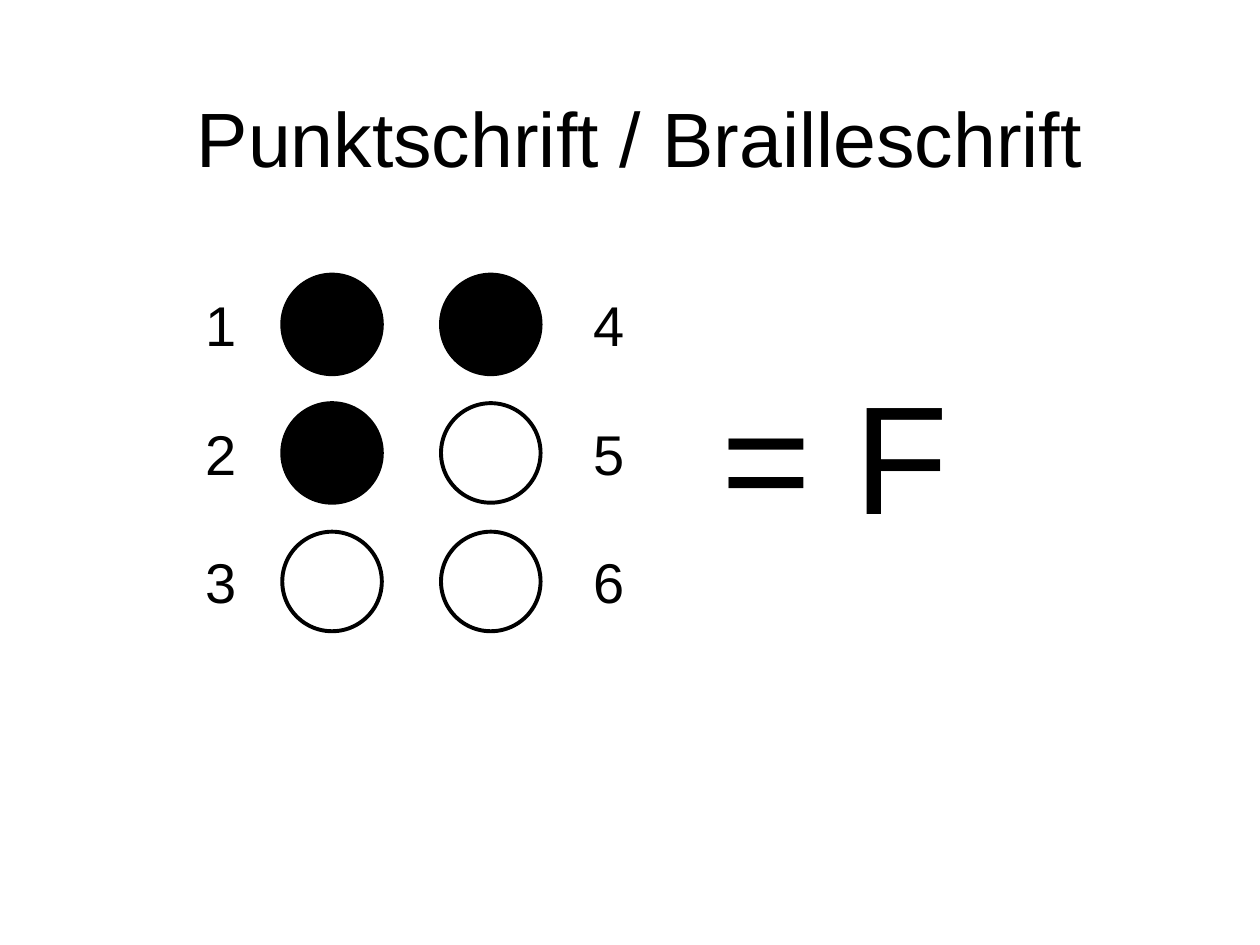
import pptx
import pptx.util
import pptx.dml.color
import pptx.enum.shapes
import pptx.enum.text

Inches, Pt = pptx.util.Inches, pptx.util.Pt
PP_ALIGN = pptx.enum.text.PP_ALIGN
ANCHOR = pptx.enum.text.MSO_ANCHOR
AUTO_SIZE = pptx.enum.text.MSO_AUTO_SIZE

# Content: braille dots by column, and the letter they form
TITLE = "Punktschrift / Brailleschrift"
COLUMNS = [(1, 2, 3), (4, 5, 6)]
RAISED = {1, 2, 4}
RESULT = "= F"

THEME = {
    "font": "Arial",
    "ink": pptx.dml.color.RGBColor(0, 0, 0),
    "title": Pt(44),
    "number": Pt(32),
    "result": Pt(88),
    "outline": Pt(2.25),
}

# Grid in inches
DOT_LEFTS = (2.24, 3.5)
NUMBER_LEFTS = (1.53, 4.61)
DOT_TOP, DOT_SIZE, ROW_STEP = 2.18, 0.79, 1.02
NUMBER_DROP = 0.08


def write(tf, text, size, align=PP_ALIGN.LEFT, **frame_format):
    for name, value in frame_format.items():
        setattr(tf, name, value)
    p = tf.paragraphs[0]
    p.alignment = align
    r = p.add_run()
    r.text = text
    for name, value in {"name": THEME["font"], "size": THEME[size]}.items():
        setattr(r.font, name, value)
    r.font.color.rgb = THEME["ink"]


def add_label(s, text, size, *box):
    sp = s.shapes.add_textbox(*map(Inches, box))
    write(sp.text_frame, text, size, word_wrap=False,
          auto_size=AUTO_SIZE.SHAPE_TO_FIT_TEXT)


def add_dot(s, left, top, raised):
    sp = s.shapes.add_shape(pptx.enum.shapes.MSO_SHAPE.OVAL,
                            *map(Inches, (left, top, DOT_SIZE, DOT_SIZE)))
    sp.shadow.inherit = False
    if raised:
        sp.fill.solid()
        sp.fill.fore_color.rgb = THEME["ink"]
    else:
        sp.fill.background()
    sp.line.color.rgb = THEME["ink"]
    sp.line.width = THEME["outline"]


def main():
    prs = pptx.Presentation()
    prs.slide_width, prs.slide_height = Inches(10), Inches(7.5)
    s = prs.slides.add_slide(prs.slide_layouts[5])

    # Title
    title = s.shapes.title
    box = {"left": 0.83, "top": 0.28, "width": 8.5, "height": 1.61}
    for name, value in box.items():
        setattr(title, name, Inches(value))
    write(title.text_frame, TITLE, "title", PP_ALIGN.CENTER,
          vertical_anchor=ANCHOR.MIDDLE, word_wrap=True, auto_size=AUTO_SIZE.NONE)

    # Braille cell with numbered dots
    for numbers, dot_left, number_left in zip(COLUMNS, DOT_LEFTS, NUMBER_LEFTS):
        for row, number in enumerate(numbers):
            top = DOT_TOP + row * ROW_STEP
            add_dot(s, dot_left, top, number in RAISED)
            add_label(s, str(number), "number",
                      number_left, top + NUMBER_DROP, 0.45, 0.63)

    # Resulting letter
    add_label(s, RESULT, "result", 5.63, 2.81, 2, 1.57)

    prs.save("out.pptx")


if __name__ == "__main__":
    main()
